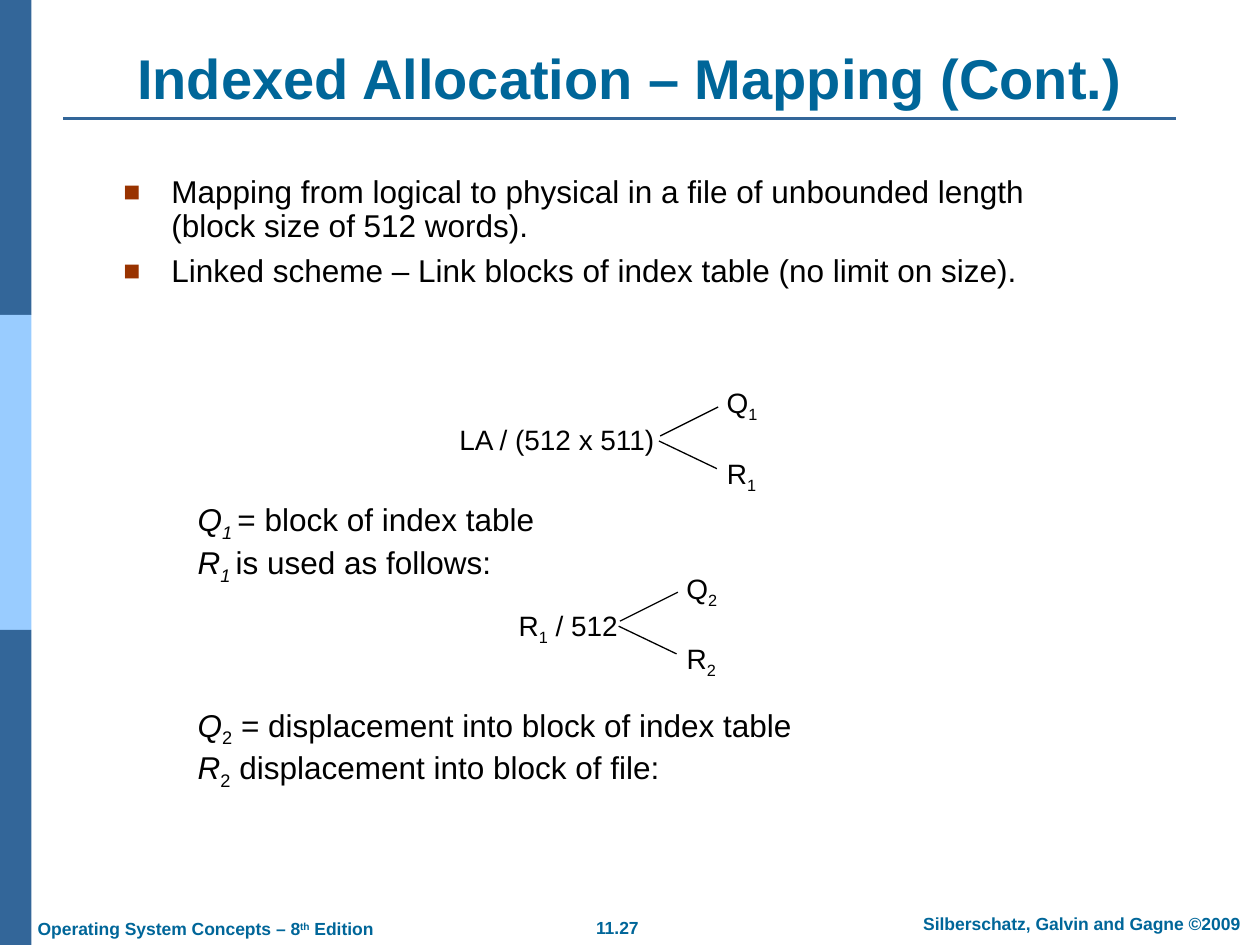
from lxml.etree import SubElement as Sub
from pptx import Presentation
from pptx.dml.color import RGBColor as Rgb
from pptx.enum.shapes import MSO_CONNECTOR as Link, MSO_SHAPE as Kind
from pptx.enum.text import MSO_ANCHOR as Anchor, MSO_AUTO_SIZE as Fit, PP_ALIGN as Align
from pptx.oxml.ns import qn
from pptx.util import Inches, Pt

HUES = {"text": "000000", "head": "006699", "dark": "336699", "light": "99CCFF", "mark": "993300"}
SHIFT = {"sub": "-25000", "sup": "30000"}


class Page:
    face = "Arial"

    def __init__(self, deck):
        self.slide = deck.slides.add_slide(deck.slide_layouts[1])
        self.shapes = self.slide.shapes

    def hue(self, name):
        return Rgb.from_string(HUES[name])

    def fill(self, para, runs, size, hue="text", bold=False):
        for text, *marks in runs:
            run = para.add_run()
            run.text = text
            font = run.font
            font.name, font.size, font.bold = self.face, Pt(size), bold
            font.italic = "it" in marks
            font.color.rgb = self.hue(hue)
            for mark in marks:
                if mark in SHIFT:
                    run._r.get_or_add_rPr().set("baseline", SHIFT[mark])

    def place(self, shape, x, y, w, h):
        shape.left, shape.top = Inches(x), Inches(y)
        shape.width, shape.height = Inches(w), Inches(h)

    def indent(self, para, left, hang):
        props = para._p.get_or_add_pPr()
        props.set("marL", str(Inches(left)))
        props.set("indent", str(Inches(-hang)))
        return props

    def bar(self, x, y, w, h, hue):
        bar = self.shapes.add_shape(Kind.RECTANGLE, Inches(x), Inches(y), Inches(w), Inches(h))
        bar.shadow.inherit = False
        bar.fill.solid()
        bar.fill.fore_color.rgb = self.hue(hue)
        bar.line.fill.background()

    def line(self, x1, y1, x2, y2, hue="text", width=0.75):
        line = self.shapes.add_connector(Link.STRAIGHT, Inches(x1), Inches(y1), Inches(x2), Inches(y2))
        line.line.color.rgb = self.hue(hue)
        line.line.width = Pt(width)
        Sub(line._element.spPr, qn("a:effectLst"))

    def title(self, text, x, y, w, h):
        shape = self.shapes.title
        self.place(shape, x, y, w, h)
        frame = shape.text_frame
        frame.auto_size = Fit.NONE
        frame.vertical_anchor = Anchor.BOTTOM
        para = frame.paragraphs[0]
        para.alignment = Align.CENTER
        self.fill(para, [(text,)], 32, "head", True)

    def list(self, items, x, y, w, h):
        shape = self.slide.placeholders[1]
        self.place(shape, x, y, w, h)
        frame = shape.text_frame
        frame.auto_size = Fit.NONE
        for i, item in enumerate(items):
            para = frame.add_paragraph() if i else frame.paragraphs[0]
            props = self.indent(para, 0.38, 0.38)
            Sub(Sub(props, qn("a:buClr")), qn("a:srgbClr"), val=HUES["mark"])
            Sub(props, qn("a:buSzPct"), val="90000")
            Sub(props, qn("a:buFont"), typeface=self.face)
            Sub(props, qn("a:buChar"), char="■")
            para.line_spacing = 0.9
            para.space_before = Pt(6.3 if i else 0)
            self.fill(para, [(item,)], 18)

    def notes(self, rows, x, y, w, h):
        frame = self.shapes.add_textbox(Inches(x), Inches(y), Inches(w), Inches(h)).text_frame
        frame.word_wrap = True
        for i, runs in enumerate(rows):
            para = frame.add_paragraph() if i else frame.paragraphs[0]
            para.level = 1
            self.indent(para, 0.69, 0.31)
            self.fill(para, runs, 18)

    def label(self, runs, x, y, w, h=0.37, size=16, hue="text", bold=False,
              align=Align.CENTER, anchor=Anchor.MIDDLE):
        frame = self.shapes.add_textbox(Inches(x), Inches(y), Inches(w), Inches(h)).text_frame
        frame.word_wrap = False
        frame.vertical_anchor = anchor
        para = frame.paragraphs[0]
        para.alignment = align
        self.fill(para, runs, size, hue, bold)

    def foot(self, runs, x, y, w, align=Align.CENTER):
        self.label(runs, x, y, w, 0.27, 10, "head", True, align, Anchor.TOP)

    def fork(self, stem, left, top, width, x, y, index):
        self.label(stem, left, top, width)
        self.label([("Q",), (index, "sub")], x, y, 0.46)
        self.label([("R",), (index, "sub")], x, y + 0.56, 0.45)
        self.line(x - 0.42, y + 0.43, x + 0.04, y + 0.2)
        self.line(x - 0.43, y + 0.47, x + 0.03, y + 0.69)


def main():
    deck = Presentation()
    deck.slide_width, deck.slide_height = Inches(10), Inches(7.5)
    page = Page(deck)

    for i, hue in enumerate(["dark", "light", "dark"]):
        page.bar(0, 2.5 * i, 0.25, 2.5, hue)
    page.line(0.5, 0.94, 9.33, 0.94, "dark", 1.5)
    page.foot([("11.27",)], 4.62, 7.23, 0.56)
    page.foot([("Silberschatz, Galvin and Gagne ©2009",)], 7.1, 7.2, 2.97)
    page.foot([("Operating System Concepts – 8",), ("th", "sup"), (" Edition",)],
              0.2, 7.24, 2.88, Align.LEFT)

    page.title("Indexed Allocation – Mapping (Cont.)", 0.5, 0.3, 9, 0.63)
    page.list([
        "Mapping from logical to physical in a file of unbounded length (block size of 512 words).",
        "Linked scheme – Link blocks of index table (no limit on size).",
    ], 0.88, 1.35, 8.06, 1.29)

    page.fork([("LA / (512 x 511)",)], 3.53, 3.3, 1.78, 5.66, 3.03, "1")
    page.notes([
        [("Q", "it"), ("1 ", "it", "sub"), ("= block of index table",)],
        [("R", "it"), ("1 ", "it", "sub"), ("is used as follows:",)],
    ], 1.09, 3.92, 7.69, 0.81)

    page.fork([("R",), ("1", "sub"), (" / 512",)], 4.01, 4.8, 1, 5.34, 4.5, "2")
    page.notes([
        [("Q", "it"), ("2", "sub"), (" = displacement into block of index table",)],
        [("R", "it"), ("2", "sub"), (" displacement into block of file:",)],
    ], 1.09, 5.55, 7.69, 0.81)

    deck.save("out.pptx")


if __name__ == "__main__":
    main()
